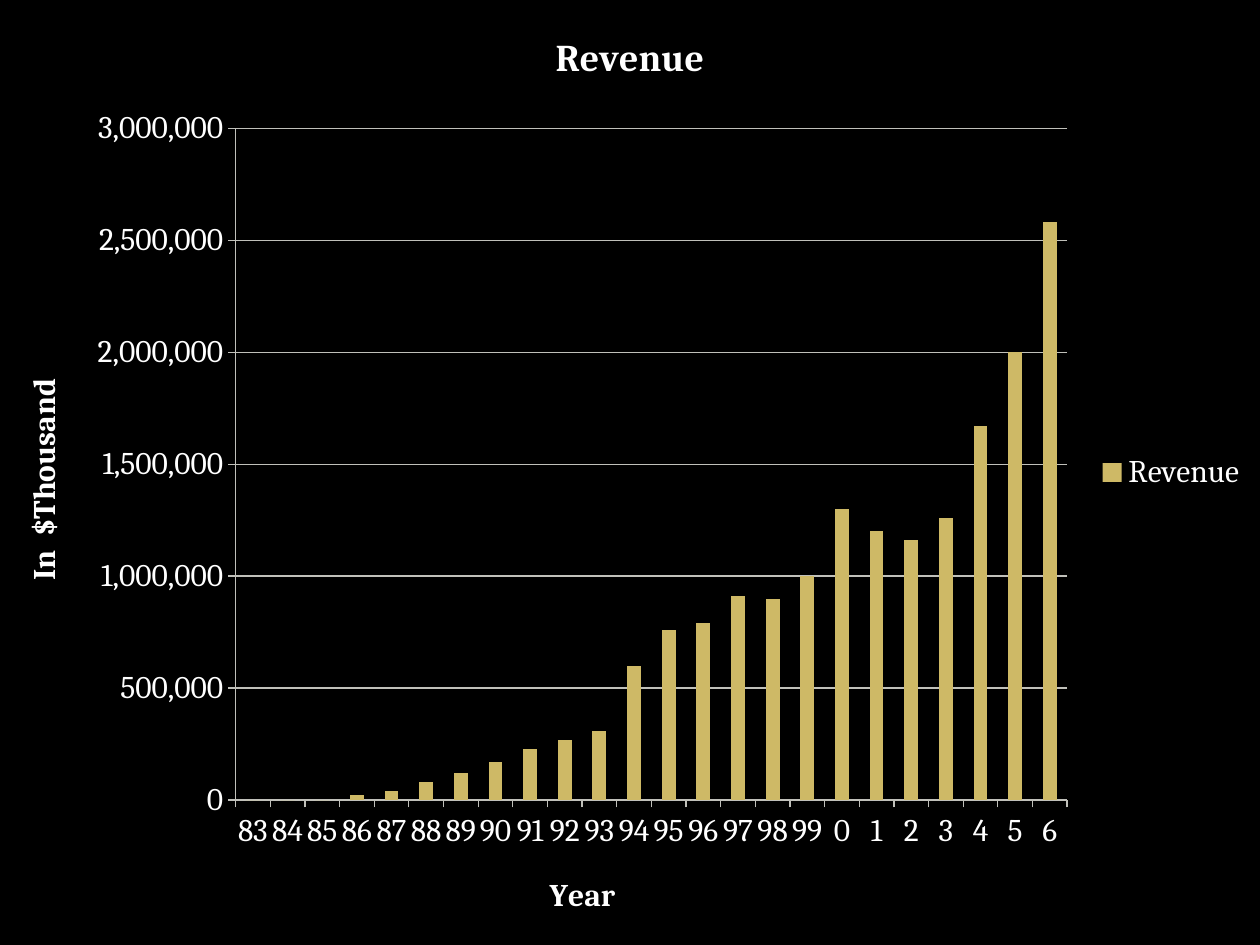
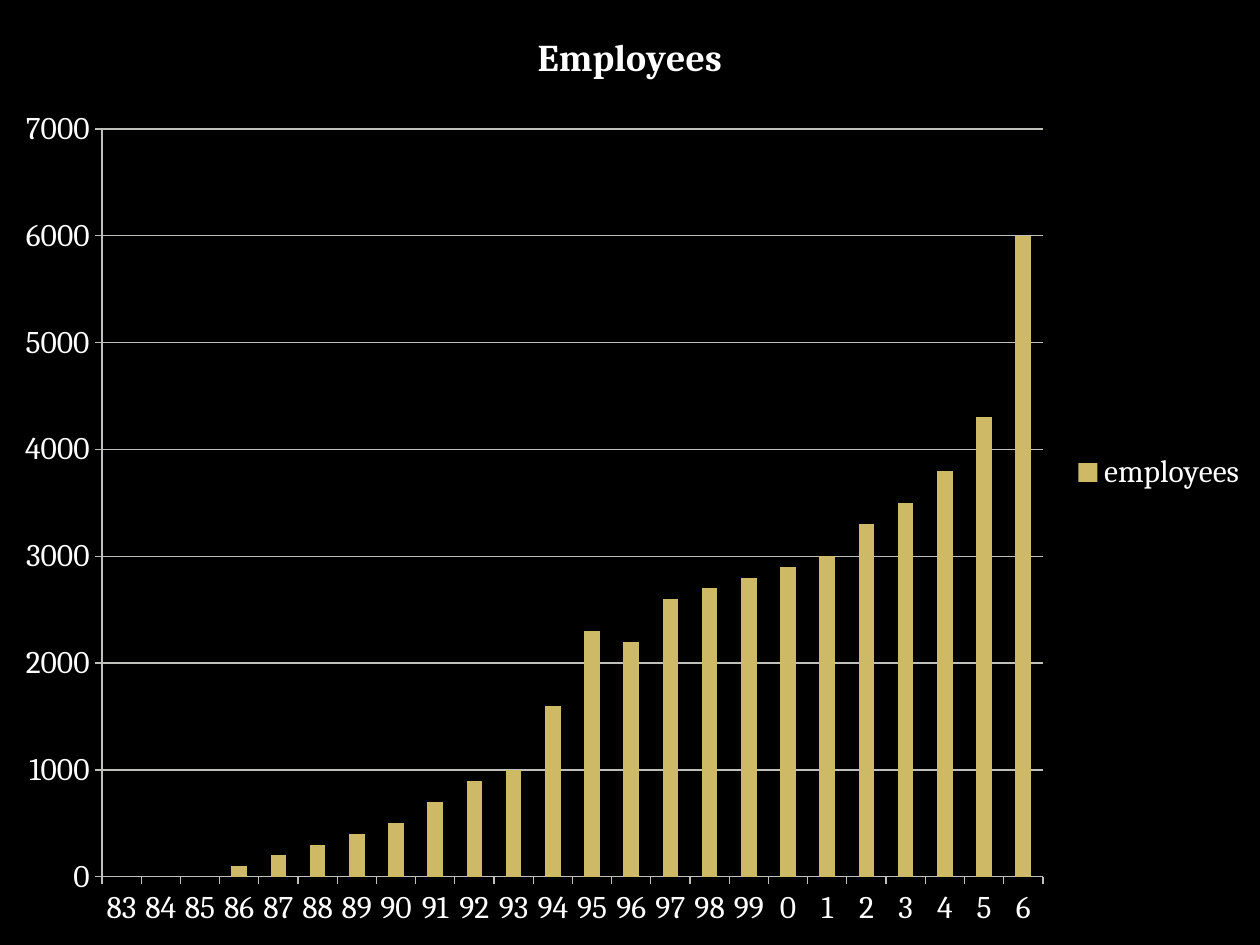
from dataclasses import dataclass

from pptx import Presentation
from pptx.chart.data import CategoryChartData
from pptx.dml.color import RGBColor
from pptx.enum.chart import XL_CHART_TYPE as ChartType
from pptx.enum.chart import XL_LEGEND_POSITION as LegendPosition
from pptx.enum.chart import XL_TICK_MARK as TickMark
from pptx.oxml import parse_xml
from pptx.oxml.ns import nsdecls, qn
from pptx.util import Inches, Pt


@dataclass(frozen=True)
class Theme:
    background: RGBColor = RGBColor(0x00, 0x00, 0x00)
    text: RGBColor = RGBColor(0xFF, 0xFF, 0xFF)
    bar: RGBColor = RGBColor(0xCE, 0xB9, 0x66)
    rule: RGBColor = RGBColor(0xC0, 0xC0, 0xBA)
    font: str = "Cambria"
    title_size: float = 21.6
    body_size: float = 18
    rule_width: float = 0.75


THEME = Theme()
WIDTH, HEIGHT = Inches(10), Inches(7.5)
BLANK_LAYOUT = 6
YEARS = [str(year % 100) for year in range(1983, 2007)]

REVENUE = [
    0, 0, 0, 20000, 40000, 80000, 120000, 170000,
    230000, 270000, 310000, 600000, 760000, 790000, 910000, 900000,
    1000000, 1300000, 1200000, 1160000, 1260000, 1670000, 2000000, 2580000,
]
EMPLOYEES = [
    0, 0, 0, 100, 200, 300, 400, 500,
    700, 900, 1000, 1600, 2300, 2200, 2600, 2700,
    2800, 2900, 3000, 3300, 3500, 3800, 4300, 6000,
]


def format_font(font, size, bold=False):
    values = {"name": THEME.font, "size": Pt(size), "bold": bold}
    for name, value in values.items():
        setattr(font, name, value)
    font.color.rgb = THEME.text


def format_rule(line):
    line.color.rgb = THEME.rule
    line.width = Pt(THEME.rule_width)


def write_title(title, text, size):
    """Write a chart title or an axis title in bold."""
    span = title.text_frame.paragraphs[0].add_run()
    span.text = text
    format_font(span.font, size, bold=True)


def format_axis(axis, title):
    axis.major_tick_mark = TickMark.OUTSIDE
    axis.minor_tick_mark = TickMark.NONE
    format_rule(axis.format.line)
    format_font(axis.tick_labels.font, THEME.body_size)
    axis.has_title = bool(title)
    if title:
        write_title(axis.axis_title, title, THEME.body_size)


def format_scale(axis, maximum, step, number_format):
    values = {"minimum_scale": 0, "maximum_scale": maximum, "major_unit": step,
              "has_major_gridlines": True}
    for name, value in values.items():
        setattr(axis, name, value)
    format_rule(axis.major_gridlines.format.line)
    axis.tick_labels.number_format = number_format
    axis.tick_labels.number_format_is_linked = False


def add_legend(chart):
    chart.has_legend = True
    chart.legend.position = LegendPosition.RIGHT
    chart.legend.include_in_layout = False
    format_font(chart.legend.font, THEME.body_size)


def place_plot(chart, left, top, width, height):
    """Fix the area inside the axes, given in lengths on the page."""
    shares = {"x": left / WIDTH, "y": top / HEIGHT,
              "w": width / WIDTH, "h": height / HEIGHT}
    modes = "".join(f'<c:{name}Mode val="edge"/>' for name in "xy")
    sizes = "".join(f'<c:{name} val="{share:.4f}"/>' for name, share in shares.items())
    layout = parse_xml(
        f'<c:layout {nsdecls("c")}><c:manualLayout><c:layoutTarget val="inner"/>'
        f'{modes}{sizes}</c:manualLayout></c:layout>')
    area = chart.element.find(qn("c:chart")).find(qn("c:plotArea")) \
        if hasattr(chart, "element") else chart._chartSpace.chart.plotArea
    for automatic in area.findall(qn("c:layout")):
        area.remove(automatic)
    area.insert(0, layout)


def add_column_chart(page, title, series_name, values, maximum, step,
                     number_format="0", year_title=None, value_title=None):
    """Fill the page with one column chart of yearly values."""
    data = CategoryChartData()
    data.categories = YEARS
    data.add_series(series_name, values)
    chart = page.shapes.add_chart(
        ChartType.COLUMN_CLUSTERED, 0, 0, WIDTH, HEIGHT, data).chart
    format_font(chart.font, THEME.body_size)
    chart.has_title = True
    write_title(chart.chart_title, title, THEME.title_size)
    format_axis(chart.category_axis, year_title)
    format_axis(chart.value_axis, value_title)
    format_scale(chart.value_axis, maximum, step, number_format)
    add_legend(chart)

    plot = chart.plots[0]
    plot.gap_width = 150
    plot.vary_by_categories = False
    fill = plot.series[0].format.fill
    fill.solid()
    fill.fore_color.rgb = THEME.bar
    return chart


def add_page(deck):
    page = deck.slides.add_slide(deck.slide_layouts[BLANK_LAYOUT])
    fill = page.background.fill
    fill.solid()
    fill.fore_color.rgb = THEME.background
    for holder in list(page.placeholders):
        holder.element.getparent().remove(holder.element)
    return page


def main():
    deck = Presentation()
    deck.slide_width, deck.slide_height = WIDTH, HEIGHT
    revenue = add_column_chart(add_page(deck), "Revenue", "Revenue", REVENUE,
                               3000000, 500000, "#,##0", "Year", "In  $Thousand")
    place_plot(revenue, Inches(1.87), Inches(1.02), Inches(6.6), Inches(5.33))
    add_column_chart(add_page(deck), "Employees", "employees", EMPLOYEES,
                     7000, 1000)
    deck.save("out.pptx")


if __name__ == "__main__":
    main()
